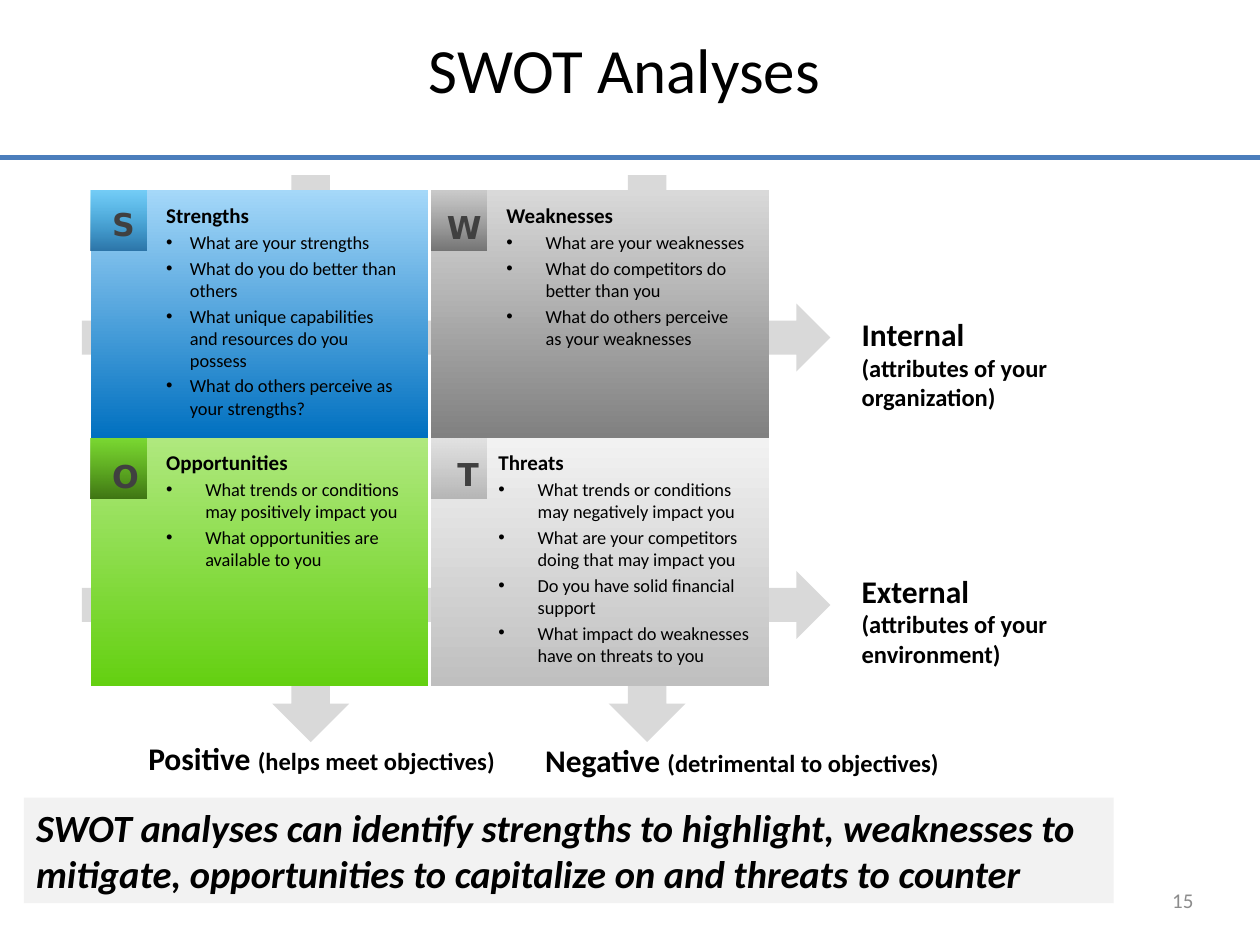
from dataclasses import dataclass

from lxml import etree
from pptx import Presentation
from pptx.dml.color import RGBColor
from pptx.enum.shapes import MSO_CONNECTOR, MSO_SHAPE
from pptx.enum.text import MSO_ANCHOR, MSO_AUTO_SIZE, PP_ALIGN
from pptx.oxml.ns import qn
from pptx.util import Cm, Pt

RECT, ARROW = MSO_SHAPE.RECTANGLE, MSO_SHAPE.DOWN_ARROW
LINE = MSO_CONNECTOR.STRAIGHT
LEFT, MID, RIGHT = PP_ALIGN.LEFT, PP_ALIGN.CENTER, PP_ALIGN.RIGHT
TOP, CENTER = MSO_ANCHOR.TOP, MSO_ANCHOR.MIDDLE
GROW, FIXED = MSO_AUTO_SIZE.SHAPE_TO_FIT_TEXT, MSO_AUTO_SIZE.NONE


@dataclass
class Theme:
    font: str = "Calibri"
    mark: str = "DejaVu Sans"
    ink: str = "000000"
    dim: str = "8C8C8C"
    dark: str = "404040"
    rule: str = "4B7EBC"
    arrow: str = "D9D9D9"
    pale: str = "F2F2F2"
    title: float = 36
    banner: float = 22
    label: float = 18
    note: float = 14
    head: float = 12
    number: float = 12
    item: float = 10.5


class Board:
    def __init__(self, slide, theme):
        self.slide, self.theme = slide, theme

    def style(self, size, **more):
        return {"size": Pt(size), "name": self.theme.font, "ink": self.theme.ink, **more}

    def add_run(self, para, text, form):
        run = para.add_run()
        run.text = text
        for key, value in form.items():
            if key == "ink":
                run.font.color.rgb = RGBColor.from_string(value)
            else:
                setattr(run.font, key, value)

    def rule(self, x1, y1, x2, y2, width):
        line = self.slide.shapes.add_connector(LINE, Cm(x1), Cm(y1), Cm(x2), Cm(y2))
        line.line.color.rgb = RGBColor.from_string(self.theme.rule)
        line.line.width = Pt(width)
        etree.SubElement(line._element.spPr, qn("a:effectLst"))

    def shape(self, kind, box, turn=0):
        item = self.slide.shapes.add_shape(kind, *map(Cm, box))
        item.rotation = turn
        item.shadow.inherit = False
        item.line.fill.background()
        return item

    def solid(self, kind, box, color, turn=0):
        item = self.shape(kind, box, turn)
        item.fill.solid()
        item.fill.fore_color.rgb = RGBColor.from_string(color)
        return item

    def fade(self, box, colors, alphas=()):
        item = self.shape(RECT, box)
        item.fill.gradient()
        item.fill.gradient_angle = 270
        for stop, color in zip(item.fill.gradient_stops, colors):
            stop.color.rgb = RGBColor.from_string(color)
        inks = item._element.spPr.iter(qn("a:srgbClr"))
        for ink, alpha in zip(list(inks), alphas):
            etree.SubElement(ink, qn("a:alpha"), val=str(alpha * 1000))

    def fill(self, item, runs, align=LEFT, anchor=TOP, size=GROW):
        frame = item.text_frame
        for key, value in {"word_wrap": True, "auto_size": size,
                           "vertical_anchor": anchor}.items():
            setattr(frame, key, value)
        para = frame.paragraphs[0]
        para.alignment = align
        for text, form in runs:
            self.add_run(para, text, form)
        return frame

    def text(self, box, runs, **more):
        return self.fill(self.slide.shapes.add_textbox(*map(Cm, box)), runs, **more)

    def points(self, box, head, items, indent):
        frame = self.text(box, [(head, self.style(self.theme.head, bold=True))])
        for item in items:
            para = frame.add_paragraph()
            para.space_before = Pt(self.theme.item * 0.2)
            props = para._p.get_or_add_pPr()
            props.set("marL", str(Cm(indent)))
            props.set("indent", str(-Cm(indent)))
            etree.SubElement(props, qn("a:buFont"), typeface="Arial")
            etree.SubElement(props, qn("a:buChar"), char="•")
            self.add_run(para, item, self.style(self.theme.item))

    def label(self, box, name, note):
        self.text(box, [(name + " ", self.style(self.theme.label, bold=True)),
                        (note, self.style(self.theme.note, bold=True))])


# Cell: column, row, fade, tile fade, tile opacity, letter box and alignment,
# text box, indent, heading, points
CELLS = {
    "O": (0, 1, ("AFE87E", "64D011"), ("64D011", "326609"), (70, 88),
          (2.01, 9.09, 0.76, 1.02), MID, (3.1, 8.94, 5.33, 2.74), 0.79, "Opportunities",
          ["What trends or conditions may positively impact you",
           "What opportunities are available to you"]),
    "S": (0, 0, ("A5D8F9", "0070C0"), ("00B0F0", "004C84"), (30, 65),
          (2.01, 4.01, 0.76, 1.02), MID, (3.1, 3.96, 5.33, 5.26), 0.48, "Strengths",
          ["What are your strengths",
           "What do you do better than others",
           "What unique capabilities and resources do you possess",
           "What do others perceive as your strengths?"]),
    "W": (1, 0, ("D9D9D9", "808080"), ("BFBFBF", "595959"), (58, 74),
          (8.76, 4.06, 0.91, 1.02), MID, (9.96, 3.96, 5.33, 4.29), 0.79, "Weaknesses",
          ["What are your weaknesses",
           "What do competitors do better than you",
           "What do others perceive as your weaknesses"]),
    "T": (1, 1, ("F2F2F2", "BFBFBF"), ("D9D9D9", "A6A6A6"), (66, 75),
          (8.97, 9.04, 0.76, 1.02), LEFT, (9.8, 8.94, 5.66, 4.72), 0.79, "Threats",
          ["What trends or conditions may negatively impact you",
           "What are your competitors doing that may impact you",
           "Do you have solid financial support",
           "What impact do weaknesses have on threats to you"]),
}

LABELS = [
    ((2.74, 14.78, 7.82, 1.02), "Positive", "(helps meet objectives)"),
    ((17.12, 6.22, 4.5, 2.24), "Internal", "(attributes of your organization)"),
    ((17.12, 11.4, 4.55, 2.24), "External", "(attributes of your environment)"),
    ((10.74, 14.81, 8.64, 1.02), "Negative", "(detrimental to objectives)"),
]


def main():
    deck = Presentation()
    deck.slide_width, deck.slide_height = Cm(25.4), Cm(19.05)
    theme = Theme()
    board = Board(deck.slides.add_slide(deck.slide_layouts[6]), theme)

    # Title, rule and page number
    board.rule(0, 3.18, 25.4, 3.18, 3)
    board.text((1.3, 0, 22.86, 2.74), [("SWOT Analyses ", board.style(theme.title))],
               align=MID, anchor=CENTER, size=FIXED)
    board.text((18.39, 17.63, 5.92, 1.02), [("15", board.style(theme.number, ink=theme.dim))],
               align=RIGHT, anchor=CENTER, size=FIXED)

    # Arrows behind the grid
    for y in (4.65, -0.74):
        board.solid(ARROW, (8.51, y, 1.37, 15.09), theme.arrow, 270)
    for x in (12.27, 5.49):
        board.solid(ARROW, (x, 3.53, 1.55, 11.43), theme.arrow)

    # Grid of four cells
    mark = board.style(theme.label, bold=True, name=theme.mark, ink=theme.dark)
    for letter, cell in CELLS.items():
        col, row, colors, tile, alphas, spot, align, box, indent, head, items = cell
        x, y = 1.83 + col * 6.86, 3.84 + row * 5
        board.fade((x, y, 6.81, 5), colors)
        board.points(box, head, items, indent)
        board.fade((x, y, 1.12, 1.22), tile, alphas)
        board.text(spot, [(letter, mark)], align=align)

    # Axis labels
    for box, name, note in LABELS:
        board.label(box, name, note)

    # Closing banner
    banner = board.solid(RECT, (0.48, 16.08, 21.97, 2.13), theme.pale)
    board.fill(banner, [("SWOT analyses can identify strengths to highlight, weaknesses to "
                         "mitigate, opportunities to capitalize on and threats to counter",
                         board.style(theme.banner, bold=True, italic=True))])

    deck.save("out.pptx")


if __name__ == "__main__":
    main()
